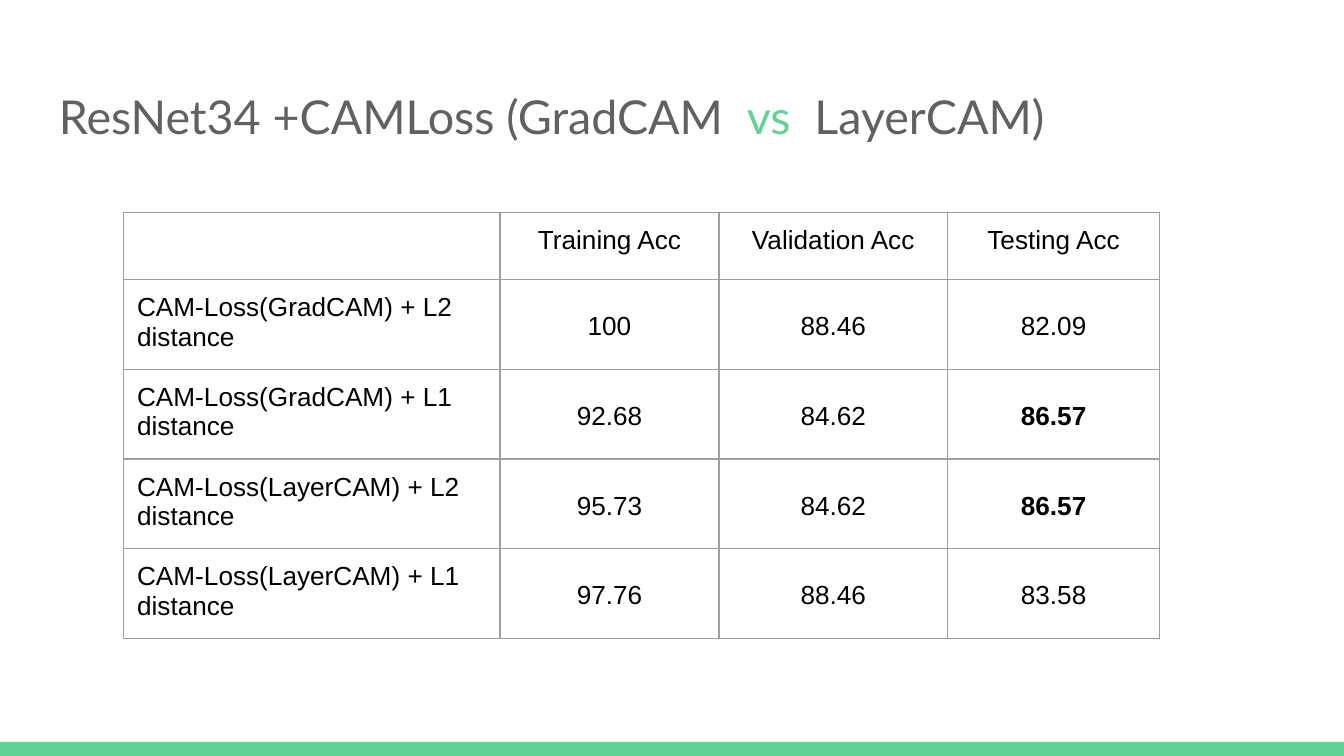
"""Build the slide comparing GradCAM and LayerCAM accuracies."""
from lxml import etree
from pptx import Presentation
from pptx.dml.color import RGBColor
from pptx.enum import shapes, text
from pptx.oxml import ns
from pptx.util import Inches, Pt

GREEN = RGBColor(0x63, 0xD2, 0x97)
GRAY = RGBColor(0x61, 0x61, 0x61)
BLACK = RGBColor(0, 0, 0)
BORDER = RGBColor(0x9E, 0x9E, 0x9E)

COLUMN_WIDTHS = [2.8, 1.63, 1.7, 1.58]
ROWS = [
    ["", "Training Acc", "Validation Acc", "Testing Acc"],
    ["CAM-Loss(GradCAM) + L2 distance", "100", "88.46", "82.09"],
    ["CAM-Loss(GradCAM) + L1 distance", "92.68", "84.62", "86.57"],
    ["CAM-Loss(LayerCAM) + L2 distance", "95.73", "84.62", "86.57"],
    ["CAM-Loss(LayerCAM) + L1 distance", "97.76", "88.46", "83.58"],
]
BEST = "86.57"


def set_margins(target, horizontal, vertical):
    target.margin_left = target.margin_right = Inches(horizontal)
    target.margin_top = target.margin_bottom = Inches(vertical)


def add_borders(cell):
    properties = cell._tc.get_or_add_tcPr()
    for side in ("lnL", "lnR", "lnT", "lnB"):
        line = etree.SubElement(properties, ns.qn(f"a:{side}"), w=str(Pt(0.75)))
        fill = etree.SubElement(line, ns.qn("a:solidFill"))
        etree.SubElement(fill, ns.qn("a:srgbClr"), val=str(BORDER))


presentation = Presentation()
presentation.slide_width = Inches(10)
presentation.slide_height = Inches(10) * 9 // 16
slide = presentation.slides.add_slide(presentation.slide_layouts[6])

footer = slide.shapes.add_shape(
    shapes.MSO_SHAPE.RECTANGLE, Inches(0), Inches(5.52), Inches(10), Inches(0.11)
)
footer.shadow.inherit = False
footer.fill.solid()
footer.fill.fore_color.rgb = GREEN
footer.line.fill.background()

title = slide.shapes.add_textbox(Inches(0.34), Inches(0.49), Inches(9.32), Inches(0.63))
frame = title.text_frame
frame.word_wrap = True
set_margins(frame, 0.1, 0.1)
paragraph = frame.paragraphs[0]
paragraph.line_spacing = 1.15
paragraph.font.size = Pt(25)
paragraph.font.name = "Lato"
for words, color in [
    ("ResNet34 +CAMLoss (GradCAM  ", GRAY),
    ("vs", GREEN),
    ("  LayerCAM)", GRAY),
]:
    run = paragraph.add_run()
    run.text = words
    run.font.color.rgb = color

table_frame = slide.shapes.add_table(
    len(ROWS), len(COLUMN_WIDTHS), Inches(0.92), Inches(1.58), Inches(3.28), Inches(3.28)
)
table = table_frame.table
table.first_row = False
table.horz_banding = False
for column, width in zip(table.columns, COLUMN_WIDTHS):
    column.width = Inches(width)
for row in table.rows:
    row.height = Inches(0.42)
table_frame.width = table_frame.height = Inches(3.28)

for row_index, values in enumerate(ROWS):
    for column_index, value in enumerate(values):
        cell = table.cell(row_index, column_index)
        add_borders(cell)
        cell.fill.background()
        set_margins(cell, 0.1, 0.1)
        if not value:
            continue
        cell.text = value
        paragraph = cell.text_frame.paragraphs[0]
        paragraph.font.size = Pt(14)
        paragraph.font.name = "Arial"
        paragraph.font.color.rgb = BLACK
        paragraph.font.bold = value == BEST
        if column_index > 0:
            paragraph.alignment = text.PP_ALIGN.CENTER
        if row_index > 0 and column_index > 0:
            set_margins(cell, 0.03, 0.02)
            cell.vertical_anchor = text.MSO_ANCHOR.MIDDLE
            paragraph.line_spacing = 1.15

presentation.save("out.pptx")
